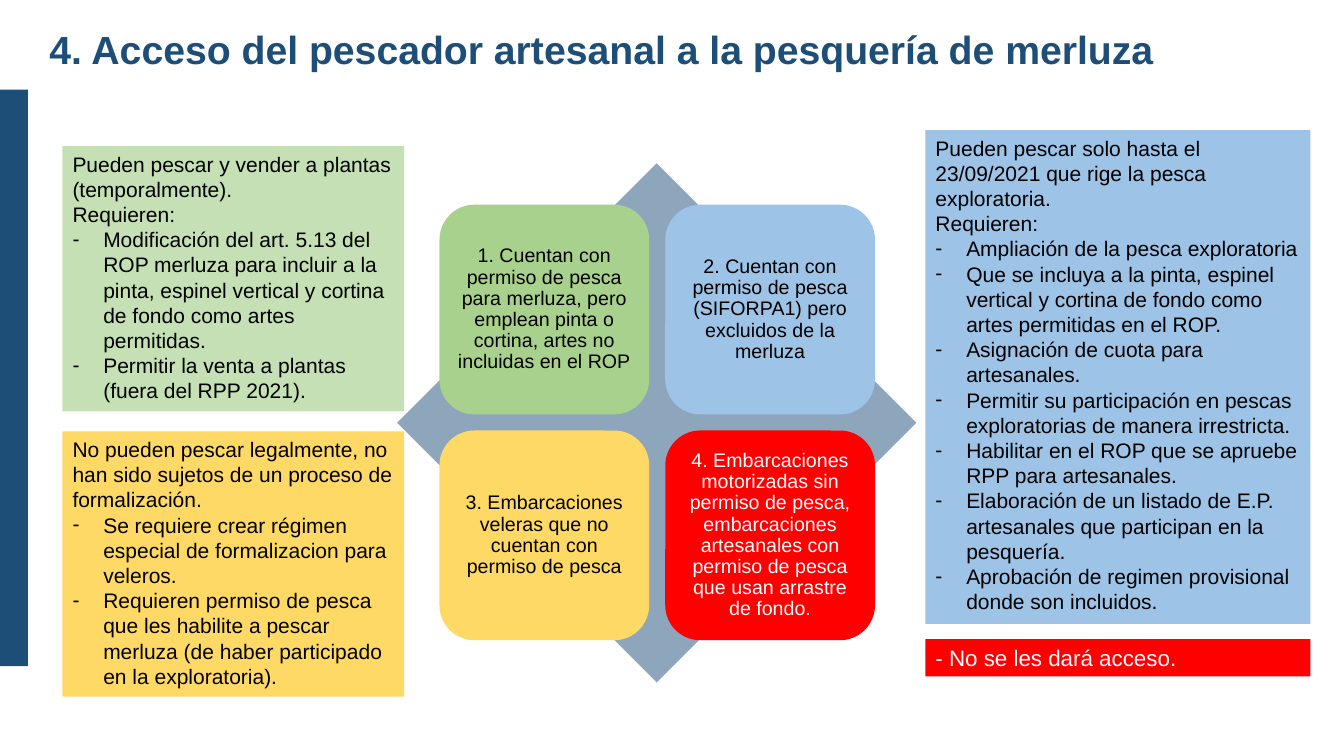
from pptx import Presentation
from pptx import util as u
from pptx.dml import color
from pptx.enum import shapes, text
from pptx.oxml import ns
from lxml import etree

COLORS = {
    "navy": "1D4E78",
    "pale_green": "C5E0B4",
    "green": "A9D18E",
    "blue": "9DC3E6",
    "yellow": "FFD966",
    "red": "FF0000",
    "black": "000000",
    "white": "FFFFFF",
}

PANELS = [
    (1, (44.6, 104.4, 244.1, 189.4), "pale_green",
     ["Pueden pescar y vender a plantas (temporalmente).", "Requieren:"],
     ["Modificación del art. 5.13 del ROP merluza para incluir a la pinta, "
      "espinel vertical y cortina de fondo como artes permitidas.",
      "Permitir la venta a plantas (fuera del RPP 2021)."]),
    (2, (661, 92.9, 275, 352.8), "blue",
     ["Pueden pescar solo hasta el 23/09/2021 que rige la pesca exploratoria.", "Requieren:"],
     ["Ampliación de la pesca exploratoria",
      "Que se incluya a la pinta, espinel vertical y cortina de fondo como "
      "artes permitidas en el ROP.",
      "Asignación de cuota para artesanales.",
      "Permitir su participación en pescas exploratorias de manera irrestricta.",
      "Habilitar en el ROP que se apruebe RPP para artesanales.",
      "Elaboración de un listado de E.P. artesanales que participan en la pesquería.",
      "Aprobación de regimen provisional donde son incluidos."]),
    (3, (44.6, 308.2, 244.1, 189.4), "yellow",
     ["No pueden pescar legalmente, no han sido sujetos de un proceso de formalización."],
     ["Se requiere crear régimen especial de formalizacion para veleros.",
      "Requieren permiso de pesca que les habilite a pescar merluza "
      "(de haber participado en la exploratoria)."]),
]

TILES = [
    ("1. Cuentan con permiso de pesca para merluza, pero emplean pinta o cortina, "
     "artes no incluidas en el ROP", "green", "black"),
    ("2. Cuentan con permiso de pesca (SIFORPA1) pero excluidos de la merluza",
     "blue", "black"),
    ("3. Embarcaciones veleras que no cuentan con permiso de pesca", "yellow", "black"),
    ("4. Embarcaciones motorizadas sin permiso de pesca, embarcaciones artesanales "
     "con permiso de pesca que usan arrastre de fondo.", "red", "white"),
]
TILE_LEFT, TILE_TOP, TILE_SIZE, TILE_PITCH = 313.9, 146.2, 149.8, 161.3


def apply_format(target, values):
    for name, value in values.items():
        setattr(target, name, value)


class SlideBuilder:
    font_name = "Arial"
    bullet_indent = 22

    def __init__(self, slide):
        self.slide = slide

    def color(self, name):
        return color.RGBColor.from_string(COLORS[name])

    def place(self, shape, box):
        apply_format(shape, dict(zip(("left", "top", "width", "height"), map(u.Pt, box))))

    def fill(self, shape, name):
        shape.fill.solid()
        shape.fill.fore_color.rgb = self.color(name)

    def frame(self, shape, anchor, inset_x=7.2, inset_y=3.6):
        apply_format(shape.text_frame, {
            "word_wrap": True,
            "auto_size": text.MSO_AUTO_SIZE.NONE,
            "vertical_anchor": anchor,
            "margin_left": u.Pt(inset_x),
            "margin_right": u.Pt(inset_x),
            "margin_top": u.Pt(inset_y),
            "margin_bottom": u.Pt(inset_y),
        })

    def fill_paragraph(self, paragraph, wording, size, name, bold=False,
                       align=text.PP_ALIGN.LEFT, spacing=1.0, bullet=False):
        apply_format(paragraph, {
            "alignment": align,
            "line_spacing": spacing,
            "space_before": u.Pt(0),
            "space_after": u.Pt(0),
        })
        indent = u.Pt(self.bullet_indent) if bullet else 0
        properties = paragraph._p.get_or_add_pPr()
        properties.set("marL", str(indent))
        properties.set("indent", str(-indent))
        if bullet:
            etree.SubElement(properties, ns.qn("a:buFont"), typeface=self.font_name)
            etree.SubElement(properties, ns.qn("a:buChar"), char="-")
        else:
            etree.SubElement(properties, ns.qn("a:buNone"))
        run = paragraph.add_run()
        run.text = wording
        apply_format(run.font, {"name": self.font_name, "size": u.Pt(size), "bold": bold})
        run.font.color.rgb = self.color(name)

    def title(self, wording, box):
        shape = self.slide.shapes.title
        self.place(shape, box)
        self.frame(shape, text.MSO_ANCHOR.TOP)
        self.fill_paragraph(shape.text_frame.paragraphs[0], wording, 28, "navy", bold=True)

    def panel(self, index, box, fill, intro, items, size=15, font_color="black"):
        shape = self.slide.placeholders[index]
        self.place(shape, box)
        self.fill(shape, fill)
        self.frame(shape, text.MSO_ANCHOR.TOP)
        lines = [(line, False) for line in intro] + [(line, True) for line in items]
        for number, (line, bullet) in enumerate(lines):
            frame = shape.text_frame
            paragraph = frame.add_paragraph() if number else frame.paragraphs[0]
            self.fill_paragraph(paragraph, line, size, font_color, bullet=bullet)

    def block(self, kind, box, fill, alpha=None):
        shape = self.slide.shapes.add_shape(kind, *map(u.Pt, box))
        shape.shadow.inherit = False
        self.fill(shape, fill)
        shape.line.fill.background()
        if alpha is not None:
            tint = shape._element.spPr.find(".//" + ns.qn("a:srgbClr"))
            etree.SubElement(tint, ns.qn("a:alpha"), val=str(alpha * 1000))
        return shape

    def tile(self, box, wording, fill, font_color):
        shape = self.block(shapes.MSO_SHAPE.ROUNDED_RECTANGLE, box, fill)
        self.frame(shape, text.MSO_ANCHOR.MIDDLE, 4.2, 4.2)
        self.fill_paragraph(shape.text_frame.paragraphs[0], wording, 14, font_color,
                            align=text.PP_ALIGN.CENTER, spacing=0.9)


def main():
    presentation = Presentation()
    apply_format(presentation, {"slide_width": u.Pt(960), "slide_height": u.Pt(540)})
    builder = SlideBuilder(presentation.slides.add_slide(presentation.slide_layouts[4]))

    builder.title("4. Acceso del pescador artesanal a la pesquería de merluza",
                  (28.1, 14.4, 812.9, 41))
    for panel in PANELS:
        builder.panel(*panel)
    builder.panel(4, (661, 456.5, 275, 26.6), "red", ["- No se les dará acceso."], [],
                  size=16, font_color="white")

    builder.block(shapes.MSO_SHAPE.DIAMOND, (283.7, 116.6, 370.8, 370.8), "navy", alpha=50)
    for number, tile in enumerate(TILES):
        row, column = divmod(number, 2)
        builder.tile((TILE_LEFT + column * TILE_PITCH, TILE_TOP + row * TILE_PITCH,
                      TILE_SIZE, TILE_SIZE), *tile)
    builder.block(shapes.MSO_SHAPE.RECTANGLE, (0, 64.1, 20, 411.8), "navy")

    presentation.save("out.pptx")


if __name__ == "__main__":
    main()
